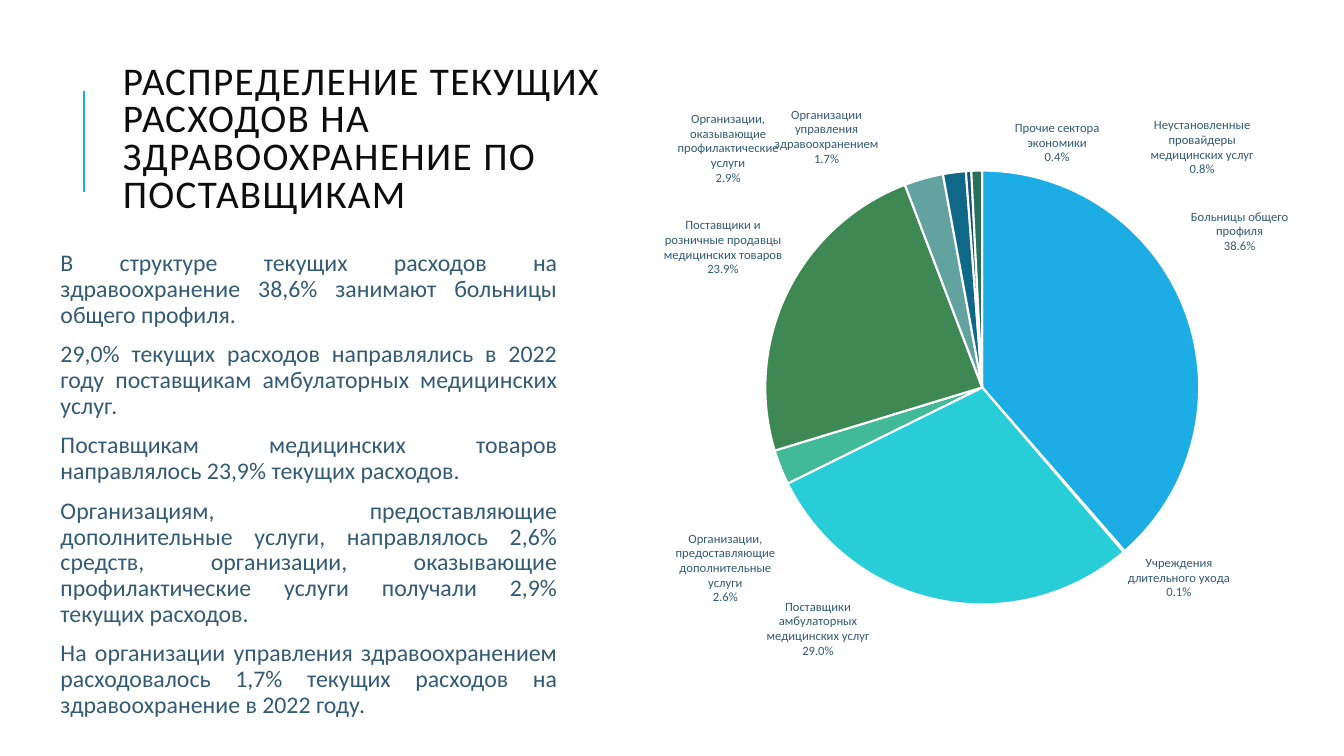
from copy import deepcopy
from dataclasses import dataclass

from lxml import etree
from pptx import Presentation
from pptx import util as u
from pptx.chart import data as chart_data
from pptx.dml import color
from pptx.enum import chart as charts, shapes, text
from pptx.oxml import parse_xml
from pptx.oxml.ns import nsdecls, qn


@dataclass(frozen=True)
class Theme:
    font: str = "Calibri"
    heading: str = "0D0D0D"
    body: str = "335B74"
    accent: str = "1CADE4"
    edge: str = "FFFFFF"
    heading_size: int = 28
    body_size: int = 17
    label_size: int = 9


THEME = Theme()

HEADING = "РАСПРЕДЕЛЕНИЕ ТЕКУЩИХ РАСХОДОВ НА ЗДРАВООХРАНЕНИЕ ПО ПОСТАВЩИКАМ"
FINDINGS = [
    "В структуре текущих расходов на здравоохранение 38,6% занимают больницы общего профиля.",
    "29,0% текущих расходов направлялись в 2022 году поставщикам амбулаторных медицинских услуг.",
    "Поставщикам медицинских товаров направлялось 23,9% текущих расходов.",
    "Организациям, предоставляющие дополнительные услуги, направлялось 2,6% средств, "
    "организации, оказывающие профилактические услуги получали 2,9% текущих расходов.",
    "На организации управления здравоохранением расходовалось 1,7% текущих расходов "
    "на здравоохранение в 2022 году.",
]
# Provider, share in percent, slice colour, label shift as a fraction of the chart
PROVIDERS = [
    ("Больницы общего профиля", 38.6, "1CADE4", (0, -0.09)),
    ("Учреждения длительного ухода", 0.1, "2683C6", None),
    ("Поставщики амбулаторных медицинских услуг", 29, "27CED7", (-0.1, -0.01)),
    ("Организации, предоставляющие дополнительные услуги", 2.6, "42BA97", (0, 0.1)),
    ("Поставщики и розничные продавцы медицинских товаров", 23.9, "3E8853", (0, -0.02)),
    ("Организации, оказывающие профилактические услуги", 2.9, "62A39F", (-0.21, 0.02)),
    ("Организации управления здравоохранением", 1.7, "106889", (-0.11, 0)),
    ("Прочие сектора экономики", 0.4, "174F77", (0.13, 0)),
    ("Остальной мир", 0, "177C81", (0, -0.01)),
    ("Неустановленные провайдеры медицинских услуг", 0.8, "28705B", (0.33, 0.02)),
]


def rgb(value):
    return color.RGBColor.from_string(value)


def style_font(font, size, ink):
    font.name = THEME.font
    font.size = u.Pt(size)
    font.color.rgb = rgb(ink)


def place(placeholder, left, top, width, height):
    placeholder.left, placeholder.top = u.Cm(left), u.Cm(top)
    placeholder.width, placeholder.height = u.Cm(width), u.Cm(height)
    frame = placeholder.text_frame
    frame.word_wrap = True
    frame.auto_size = text.MSO_AUTO_SIZE.NONE
    return frame


def add_heading(slide):
    frame = place(slide.shapes.title, 2.84, 1.63, 13.23, 3.81)
    frame.vertical_anchor = text.MSO_ANCHOR.MIDDLE
    paragraph = frame.paragraphs[0]
    paragraph.alignment = text.PP_ALIGN.LEFT
    paragraph.line_spacing = 0.8
    run = paragraph.add_run()
    run.text = HEADING
    style_font(run.font, THEME.heading_size, THEME.heading)
    run.font._element.set("spc", "100")


def add_findings(slide):
    frame = place(slide.placeholders[1], 1.27, 6.2, 13.03, 12.14)
    frame.vertical_anchor = text.MSO_ANCHOR.TOP
    for index, finding in enumerate(FINDINGS):
        paragraph = frame.add_paragraph() if index else frame.paragraphs[0]
        paragraph.alignment = text.PP_ALIGN.JUSTIFY
        paragraph.line_spacing = 0.9
        paragraph.space_before, paragraph.space_after = u.Pt(0), u.Pt(10)
        # No bullet and no hanging indent
        properties = paragraph._p.get_or_add_pPr()
        properties.set("marL", "0")
        properties.set("indent", "0")
        etree.SubElement(properties, qn("a:buNone"))
        run = paragraph.add_run()
        run.text = finding
        style_font(run.font, THEME.body_size, THEME.body)


def add_accent_line(slide, x, top, bottom):
    accent = slide.shapes.add_connector(
        shapes.MSO_CONNECTOR.STRAIGHT, u.Cm(x), u.Cm(bottom), u.Cm(x), u.Cm(top))
    accent.line.color.rgb = rgb(THEME.accent)
    accent.line.width = u.Pt(1.5)
    etree.SubElement(accent._element.spPr, qn("a:effectLst"))


def manual_layout(x, y, extent=""):
    return (f'<c:layout {nsdecls("c")}><c:manualLayout>{extent and extent[0]}'
            f'<c:x val="{x}"/><c:y val="{y}"/>{extent and extent[1]}'
            '</c:manualLayout></c:layout>')


def shift_label(group, index, shift):
    label = parse_xml(f'<c:dLbl {nsdecls("c")}><c:idx val="{index}"/>'
                      f'{manual_layout(*shift)}</c:dLbl>')
    for child in group:
        if child.tag not in (qn("c:dLbl"), qn("c:showLeaderLines")):
            label.append(deepcopy(child))
    return label


def format_labels(plot):
    plot.has_data_labels = True
    labels = plot.data_labels
    style_font(labels.font, THEME.label_size, THEME.body)
    labels.number_format, labels.number_format_is_linked = "0.0%", False
    labels.position = charts.XL_LABEL_POSITION.OUTSIDE_END
    labels.show_value = False
    labels.show_category_name = labels.show_percentage = True
    group = labels._element
    for leader in group.findall(qn("c:showLeaderLines")):
        group.remove(leader)
    if group.find(qn("c:showBubbleSize")) is None:
        etree.SubElement(group, qn("c:showBubbleSize")).set("val", "0")
    etree.SubElement(group, qn("c:separator")).text = "\n"
    etree.SubElement(group, qn("c:showLeaderLines")).set("val", "0")

    # Labels belong to the series, with the shifted ones listed first
    series_labels = plot.series[0].data_labels._element
    series_labels.getparent().replace(series_labels, group)
    shifted = [shift_label(group, index, shift)
               for index, (_, _, _, shift) in enumerate(PROVIDERS) if shift]
    for position, label in enumerate(shifted):
        group.insert(position, label)


def add_provider_pie(slide):
    shares = chart_data.CategoryChartData()
    shares.categories = [provider for provider, *_ in PROVIDERS]
    shares.add_series("Series 1", [share for _, share, *_ in PROVIDERS])
    pie = slide.shapes.add_chart(
        charts.XL_CHART_TYPE.PIE, u.Cm(15.8), u.Cm(1.8), u.Cm(17.22), u.Cm(15.62), shares).chart
    pie.has_legend = pie.has_title = False
    style_font(pie.font, 10, THEME.body)
    plot = pie.plots[0]
    plot.vary_by_categories = True
    for index, (_, _, fill, _) in enumerate(PROVIDERS):
        sector = plot.series[0].points[index].format
        sector.fill.solid()
        sector.fill.fore_color.rgb = rgb(fill)
        sector.line.color.rgb = rgb(THEME.edge)
        sector.line.width = u.Pt(1.5)
    format_labels(plot)

    # Fixed room for the pie
    area = pie._chartSpace.chart.plotArea
    for layout in area.findall(qn("c:layout")):
        area.remove(layout)
    extent = ('<c:layoutTarget val="inner"/><c:xMode val="edge"/><c:yMode val="edge"/>',
              '<c:w val="0.64"/><c:h val="0.7"/>')
    area.insert(0, parse_xml(manual_layout(0.2, 0.16, extent)))


def main():
    deck = Presentation()
    deck.slide_width, deck.slide_height = u.Cm(33.87), u.Cm(19.05)
    slide = deck.slides.add_slide(deck.slide_layouts[1])
    add_accent_line(slide, 2.11, 2.29, 4.83)
    add_heading(slide)
    add_findings(slide)
    add_provider_pie(slide)
    deck.save("out.pptx")


if __name__ == "__main__":
    main()
